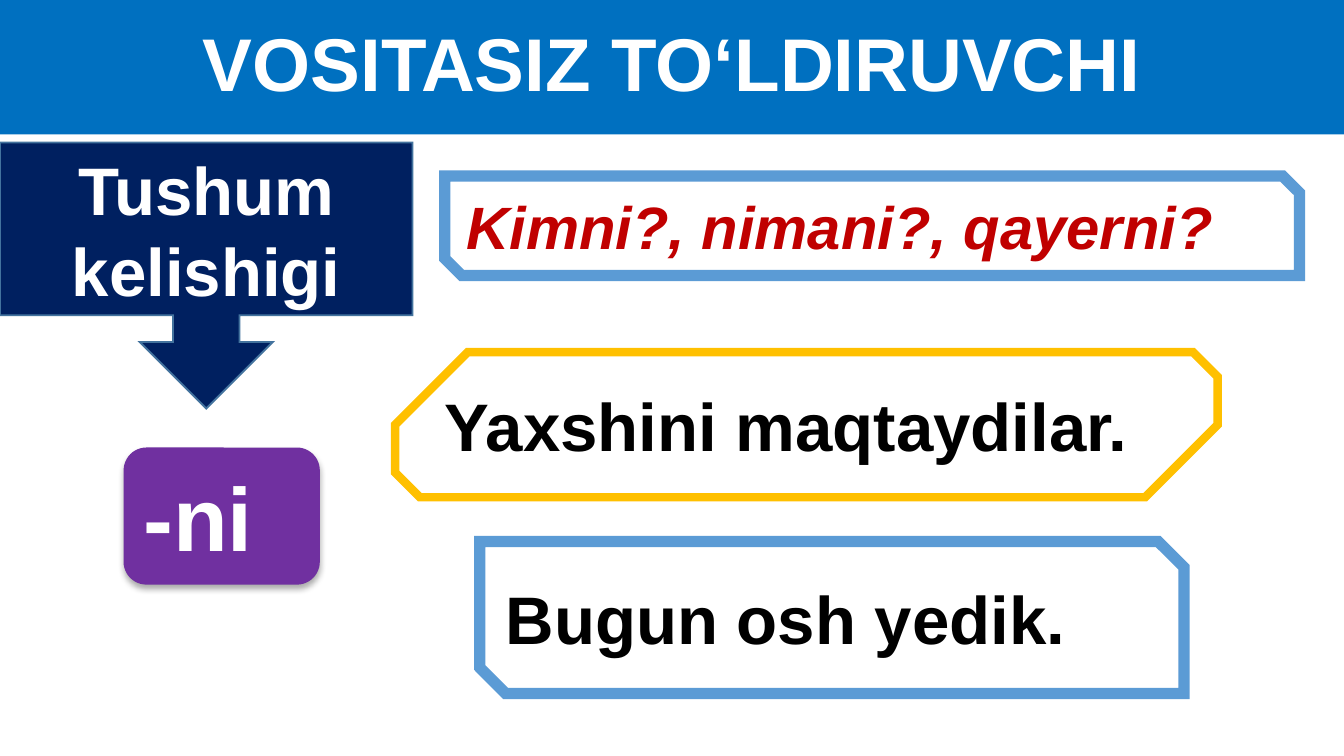
from dataclasses import dataclass

from lxml.etree import SubElement
from pptx import Presentation
from pptx.dml.color import RGBColor
from pptx.enum.shapes import MSO_SHAPE
from pptx.enum.text import MSO_ANCHOR, PP_ALIGN
from pptx.oxml.ns import qn
from pptx.util import Inches, Pt


@dataclass(frozen=True)
class Theme:
    font: str = "Arial"
    white: str = "FFFFFF"
    black: str = "000000"
    blue: str = "0070C0"
    navy: str = "002060"
    navy_edge: str = "43739E"
    purple: str = "7030A0"
    sky: str = "5B9BD5"
    gold: str = "FFC000"
    red: str = "C00000"
    title: int = 40
    suffix: int = 48
    body: int = 36
    question: int = 32


theme = Theme()
prs = Presentation()
prs.slide_width = Inches(10)
prs.slide_height = prs.slide_width * 9 // 16
s = prs.slides.add_slide(prs.slide_layouts[6])
cell = prs.slide_width / 100  # square grid cell, 100 columns across


def add_box(kind, grid, text, size, color, fill, line=None, width=0, align=PP_ALIGN.JUSTIFY):
    """Add a filled shape with bold text; grid is left, top, width, height in cells."""
    sp = s.shapes.add_shape(kind, *(round(n * cell) for n in grid))
    sp.shadow.inherit = False
    sp.fill.solid()
    sp.fill.fore_color.rgb = RGBColor.from_string(fill)
    if line:
        sp.line.color.rgb = RGBColor.from_string(line)
        sp.line.width = Pt(width)
        SubElement(sp._element.spPr.find(qn("a:ln")), qn("a:miter"), lim="800000")
    else:
        sp.line.fill.background()
    tf = sp.text_frame
    tf.word_wrap = True
    tf.vertical_anchor = MSO_ANCHOR.MIDDLE
    tf.text = text
    p = tf.paragraphs[0]
    p.alignment = align
    font = p.runs[0].font
    font.name, font.size, font.bold = theme.font, Pt(size), True
    font.color.rgb = RGBColor.from_string(color)
    return sp


title = add_box(MSO_SHAPE.RECTANGLE, (0, 0, 100, 10), "VOSITASIZ TO‘LDIRUVCHI",
                theme.title, theme.white, theme.blue, align=PP_ALIGN.CENTER)
title.text_frame.paragraphs[0].line_spacing = 0.9

add_box(MSO_SHAPE.DOWN_ARROW_CALLOUT, (0, 10.6, 30.7, 19.8), "Tushum kelishigi",
        theme.body, theme.white, theme.navy, theme.navy_edge, 1, PP_ALIGN.CENTER)

suffix = add_box(MSO_SHAPE.ROUNDED_RECTANGLE, (9.2, 33.3, 14.6, 10.2), "-ni",
                 theme.suffix, theme.white, theme.purple)
effects = suffix._element.spPr.find(qn("a:effectLst"))
shadow = SubElement(effects, qn("a:outerShdw"), blurRad=str(Pt(3.5)), dist=str(Pt(2.2)),
                    dir="5400000", rotWithShape="0")
shade = SubElement(shadow, qn("a:srgbClr"), val=theme.black)
SubElement(shade, qn("a:alpha"), val="32000")

snipped_boxes = [
    ((33.1, 13.1, 63.6, 7.4), "Kimni?, nimani?, qayerni?", theme.question, theme.red,
     theme.sky, 6, (0, 0.17)),
    ((29.4, 26.2, 61.2, 10.8), "Yaxshini maqtaydilar.", theme.body, theme.black,
     theme.gold, 4.5, (0.5, 0.17)),
    ((35.7, 40.3, 52.4, 11.3), "Bugun osh yedik.", theme.body, theme.black,
     theme.sky, 6, (0, 0.17)),
]
for grid, text, size, color, line, width, snips in snipped_boxes:
    sp = add_box(MSO_SHAPE.SNIP_2_DIAG_RECTANGLE, grid, text, size, color,
                 theme.white, line, width)
    sp.adjustments[0], sp.adjustments[1] = snips
    sp.text_frame.paragraphs[0].runs[0].font.italic = color == theme.red

prs.save("out.pptx")
